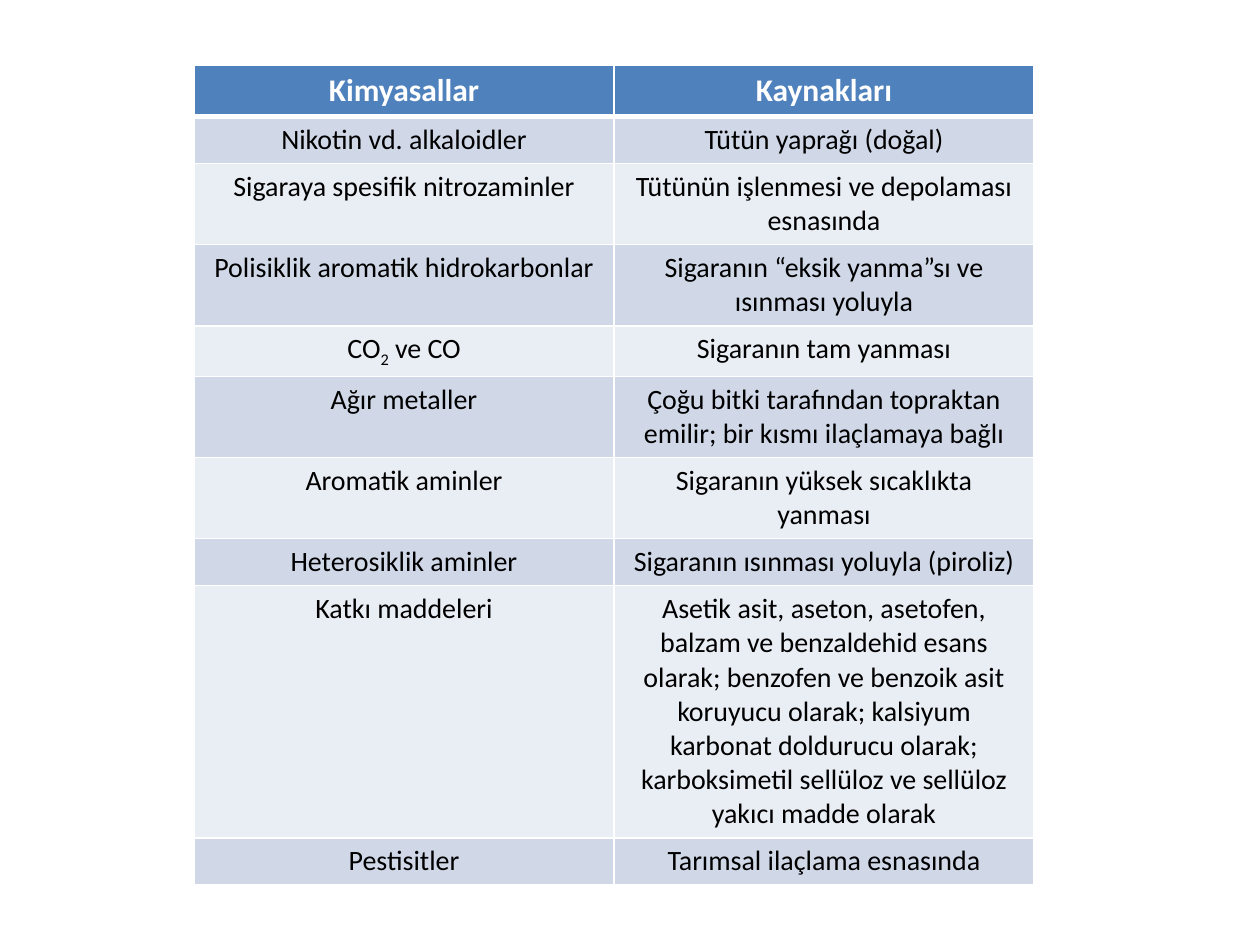
from lxml import etree
from pptx import Presentation
from pptx.dml.color import RGBColor
from pptx.enum import text
from pptx.oxml import ns
from pptx.util import Pt

HUES = {"head": "4F81BD", "odd": "D0D8E8", "even": "E9EDF4",
        "white": "FFFFFF", "black": "000000"}
HEAD = {"size": Pt(18), "bold": True, "name": "Calibri"}
BODY = {"size": Pt(16), "bold": False, "name": "Calibri"}
SUB = "₂"
ROWS = [
    (24, "Kimyasallar", "Kaynakları"),
    (21.6, "Nikotin vd. alkaloidler", "Tütün yaprağı (doğal)"),
    (38.2, "Sigaraya spesifik nitrozaminler",
     "Tütünün işlenmesi ve depolaması esnasında"),
    (38.2, "Polisiklik aromatik hidrokarbonlar",
     "Sigaranın “eksik yanma”sı ve ısınması yoluyla"),
    (21.6, "CO₂ ve CO", "Sigaranın tam yanması"),
    (38.2, "Ağır metaller",
     "Çoğu bitki tarafından topraktan emilir; bir kısmı ilaçlamaya bağlı"),
    (38.2, "Aromatik aminler", "Sigaranın yüksek sıcaklıkta yanması"),
    (21.6, "Heterosiklik aminler", "Sigaranın ısınması yoluyla (piroliz)"),
    (118, "Katkı maddeleri",
     "Asetik asit, aseton, asetofen, balzam ve benzaldehid esans olarak; "
     "benzofen ve benzoik asit koruyucu olarak; kalsiyum karbonat doldurucu "
     "olarak; karboksimetil sellüloz ve sellüloz yakıcı madde olarak"),
    (24, "Pestisitler", "Tarımsal ilaçlama esnasında"),
]


def rgb(key):
    """Return the named colour."""
    return RGBColor.from_string(HUES[key])


def edge(cell, wide):
    """Draw white borders, thick on the sides given in wide."""
    props = cell._tc.get_or_add_tcPr()
    for side in "LRTB":
        line = etree.SubElement(props, ns.qn(f"a:ln{side}"),
                                w=str(Pt(3 if side in wide else 1)))
        fill = etree.SubElement(line, ns.qn("a:solidFill"))
        etree.SubElement(fill, ns.qn("a:srgbClr"), val=HUES["white"])


def write(para, words, style, hue):
    """Write centred words, lowering the subscript digit."""
    para.alignment = text.PP_ALIGN.CENTER
    start, mark, rest = words.partition(SUB)
    for part in filter(None, (start, mark, rest)):
        run = para.add_run()
        run.text = "2" if part == SUB else part
        for name, value in style.items():
            setattr(run.font, name, value)
        run.font.color.rgb = rgb(hue)
        if part == SUB:
            run.font._element.set("baseline", "-25000")


def draw_table(slide, left, top, width, height):
    """Place the table of chemicals and sources in the box."""
    frame = slide.shapes.add_table(len(ROWS), 2, Pt(left), Pt(top),
                                   Pt(width), Pt(height))
    table = frame.table
    for row, (tall, *words) in enumerate(ROWS):
        table.rows[row].height = Pt(tall)
        style, ink = (BODY, "black") if row else (HEAD, "white")
        hue = ("odd" if row % 2 else "even") if row else "head"
        for col, word in enumerate(words):
            cell = table.cell(row, col)
            edge(cell, {0: "B", 1: "T"}.get(row, ""))
            cell.fill.solid()
            cell.fill.fore_color.rgb = rgb(hue)
            write(cell.text_frame.paragraphs[0], word, style, ink)
    frame.height = Pt(height)


def main():
    """Build and save the slide."""
    deck = Presentation()
    deck.slide_width, deck.slide_height = Pt(720), Pt(540)
    slide = deck.slides.add_slide(deck.slide_layouts[6])
    draw_table(slide, 110.9, 37.5, 480, 458.6)
    deck.save("out.pptx")


if __name__ == "__main__":
    main()
